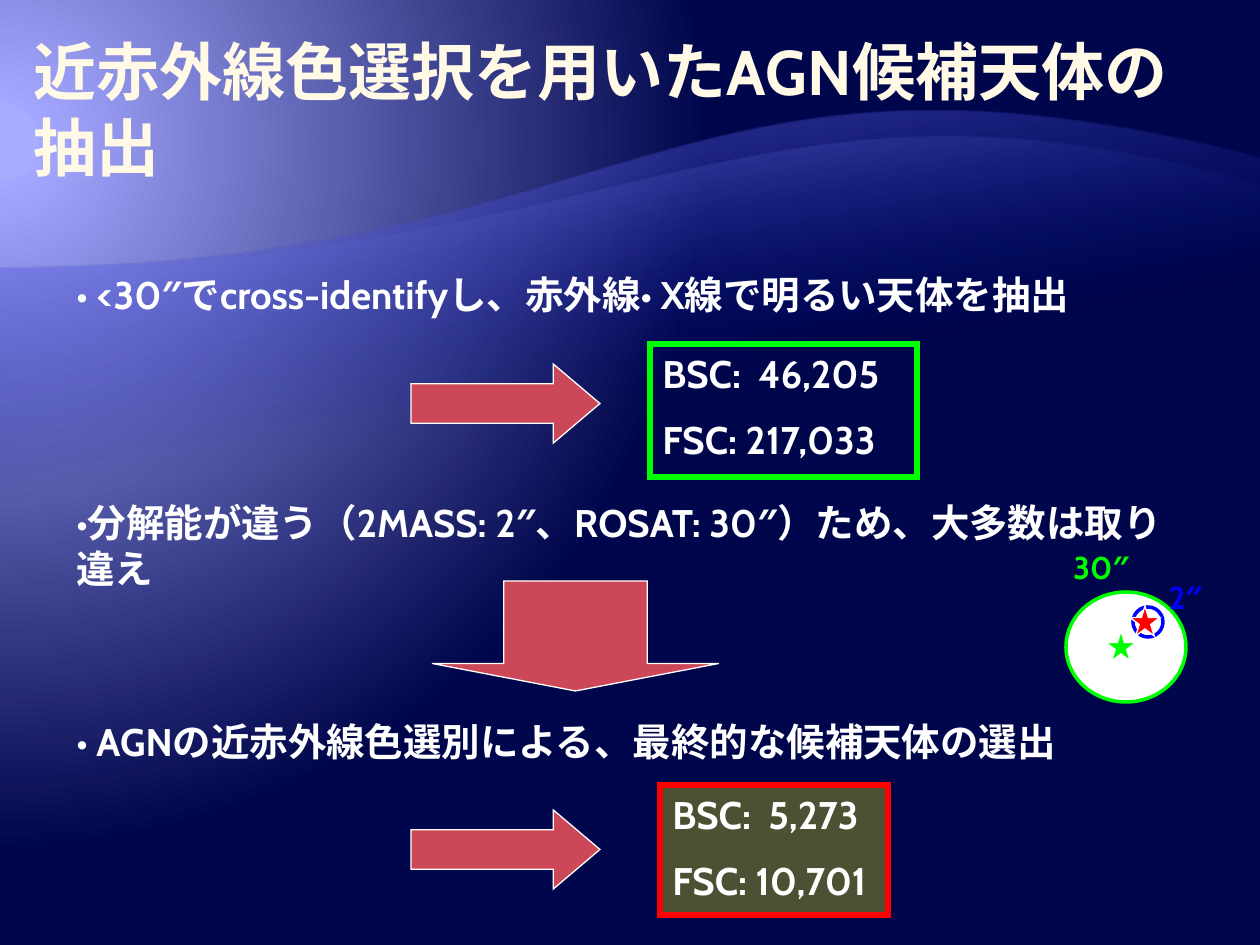
from lxml.etree import SubElement
from pptx import Presentation
from pptx.dml.color import RGBColor
from pptx.enum.lang import MSO_LANGUAGE_ID as Lang
from pptx.enum.shapes import MSO_SHAPE as Shape
from pptx.enum.text import MSO_ANCHOR as Anchor, MSO_AUTO_SIZE as AutoSize, PP_ALIGN as Align
from pptx.oxml.ns import qn
from pptx.util import Emu, Pt

PX = 914400 // 126
W, H = 1260, 945
WHITE, RED, GREEN, BLUE = "FFFFFF", "FF0000", "00FF00", "0000FF"


def rgb(value):
    return RGBColor.from_string(value)


def px(*lengths):
    return [Emu(n * PX) for n in lengths]


def set_alpha(color_element, percent):
    SubElement(color_element, qn("a:alpha"), val=str(percent * 1000))


def set_gradient(fill, owner, stops):
    """Give fill the (position, colour, opacity) stops; return its XML element."""
    fill.gradient()
    grad = next(owner.iter(qn("a:gradFill")))
    for child in list(grad):
        grad.remove(child)
    grad.set("rotWithShape", "1")
    stop_list = SubElement(grad, qn("a:gsLst"))
    for position, color, opacity in stops:
        stop = SubElement(stop_list, qn("a:gs"), pos=str(position * 1000))
        set_alpha(SubElement(stop, qn("a:srgbClr"), val=color), opacity)
    return grad


def write(tf, text, size=22, color=WHITE, align=Align.LEFT, anchor=Anchor.TOP):
    tf.word_wrap = True
    tf.auto_size = AutoSize.NONE
    tf.vertical_anchor = anchor
    for i, line in enumerate(text.split("\n")):
        p = tf.paragraphs[0] if i == 0 else tf.add_paragraph()
        p.alignment = align
        p.space_before = Pt(size / 2 if i else 0)
        r = p.add_run()
        r.text = line
        font = r.font
        font.size, font.bold, font.name = Pt(size), True, "Cabin"
        font.color.rgb = rgb(color)
        font.language_id = Lang.JAPANESE
        SubElement(r._r.get_or_add_rPr(), qn("a:ea"), typeface="Cabin")


class Deck:
    def __init__(self):
        self.prs = Presentation()
        self.prs.slide_width, self.prs.slide_height = px(W, H)
        self.s = self.prs.slides.add_slide(self.prs.slide_layouts[5])

    def background(self, stops, **target):
        """Circular gradient; target holds the l, t, r, b percentages of its centre."""
        grad = set_gradient(self.s.background.fill, self.s.element, stops)
        shade = SubElement(grad, qn("a:path"), path="circle")
        SubElement(shade, qn("a:fillToRect"),
                   **{side: str(n * 1000) for side, n in target.items()})

    def wave(self, curve, bottom, stops):
        """Area below a cubic curve, fading out downwards; drawn turned by 180 degrees."""
        top = curve[-1][1]
        start, *bend = [(W - x, top + bottom - y) for x, y in curve]
        builder = self.s.shapes.build_freeform(*start, scale=PX)
        builder.add_line_segments([bend[-1], (0, top), (W, top)], close=True)
        sp = builder.convert_to_shape()
        sp.rotation = 180
        sp.shadow.inherit = False
        sp.line.fill.background()
        segment = next(sp._element.iter(qn("a:lnTo")))
        segment.tag = qn("a:cubicBezTo")
        segment.remove(segment[0])
        for x, y in bend:
            SubElement(segment, qn("a:pt"), x=str(x), y=str(y - top))
        for pt in segment:
            pt.set("x", str(int(pt.get("x")) * PX))
            pt.set("y", str(int(pt.get("y")) * PX))
        outline = next(sp._element.iter(qn("a:path")))
        unit = int(sp.width) // int(outline.get("w"))
        for pt in segment:
            pt.set("x", str(int(pt.get("x")) // unit))
            pt.set("y", str(int(pt.get("y")) // unit))
        grad = set_gradient(sp.fill, sp._element, stops)
        SubElement(grad, qn("a:lin"), ang=str(80 * 60000), scaled="0")

    def title(self, text, *box):
        sp = self.s.shapes.title
        sp.left, sp.top, sp.width, sp.height = px(*box)
        tf = sp.text_frame
        tf.margin_left = tf.margin_right = 0
        tf.margin_top = tf.margin_bottom = Emu(PX)
        write(tf, text, size=36, color="FFF9E5", anchor=Anchor.BOTTOM)

    def text(self, text, *box, **style):
        write(self.s.shapes.add_textbox(*px(*box)).text_frame, text, **style)

    def shape(self, kind, *box, fill=None, line=WHITE, width=0.75, opacity=100,
              adjust=(), text=None):
        sp = self.s.shapes.add_shape(kind, *px(*box))
        sp.shadow.inherit = False
        for i, value in enumerate(adjust):
            sp.adjustments[i] = value
        if fill:
            sp.fill.solid()
            sp.fill.fore_color.rgb = rgb(fill)
            if opacity < 100:
                set_alpha(next(sp._element.spPr.iter(qn("a:srgbClr"))), opacity)
        else:
            sp.fill.background()
        sp.line.color.rgb = rgb(line)
        sp.line.width = Pt(width)
        SubElement(sp.line._get_or_add_ln(), qn("a:miter"), lim="800000")
        if text:
            write(sp.text_frame, text)

    def arrow(self, kind, *box, head):
        self.shape(kind, *box, fill="CC4757", adjust=(0.5, head))

    def star(self, x, y, color):
        self.shape(Shape.STAR_5_POINT, x, y, 30, 30, fill=color)

    def circle(self, *box, line):
        self.shape(Shape.OVAL, *box, fill=WHITE, line=line, width=2)


def main():
    deck = Deck()
    deck.background([(5, "A8ACFF", 100), (5, "A3A7FF", 100), (90, "00064B", 100)],
                    l=20, t=30, r=135, b=100)
    left = (0, 268)
    deck.wave((left, (630, 268), (673, 6), (W, 158)), 924,
              [(65, "000D9E", 0), (100, "797FFF", 55)])
    deck.wave((left, (630, 268), (753, 39), (W, 185)), 803,
              [(65, "000D9E", 0), (100, "A3A7FF", 30)])

    deck.title("近赤外線色選択を用いたAGN候補天体の抽出", 34, 27, 1196, 158)
    for text, top, width, height in (
        ("• <30″でcross-identifyし、赤外線• X線で明るい天体を抽出", 265, 1091, 59),
        ("•分解能が違う（2MASS: 2″、ROSAT: 30″）ため、大多数は取り違え", 493, 1137, 106),
        ("• AGNの近赤外線色選別による、最終的な候補天体の選出", 712, 1052, 59),
    ):
        deck.text(text, 64, top, width, height)

    deck.shape(Shape.RECTANGLE, 650, 344, 267, 133, line=GREEN, width=3,
               text="BSC:  46,205\nFSC: 217,033")
    deck.shape(Shape.RECTANGLE, 660, 785, 228, 130, fill="FFFF00", opacity=30,
               line=RED, width=3, text="BSC:  5,273\nFSC: 10,701")
    for top in (364, 810):
        deck.arrow(Shape.RIGHT_ARROW, 411, top, 189, 79, head=0.59)
    deck.arrow(Shape.DOWN_ARROW, 432, 581, 287, 110, head=0.25)

    deck.circle(1066, 592, 120, 110, line=GREEN)
    deck.circle(1133, 607, 30, 30, line=BLUE)
    deck.star(1130, 606, RED)
    deck.text("2″", 1146, 572, 79, 50, size=18, color=BLUE, align=Align.CENTER)
    deck.text("30″", 1046, 542, 110, 50, size=18, color=GREEN, align=Align.CENTER)
    deck.star(1106, 631, GREEN)
    deck.prs.save("out.pptx")


if __name__ == "__main__":
    main()
